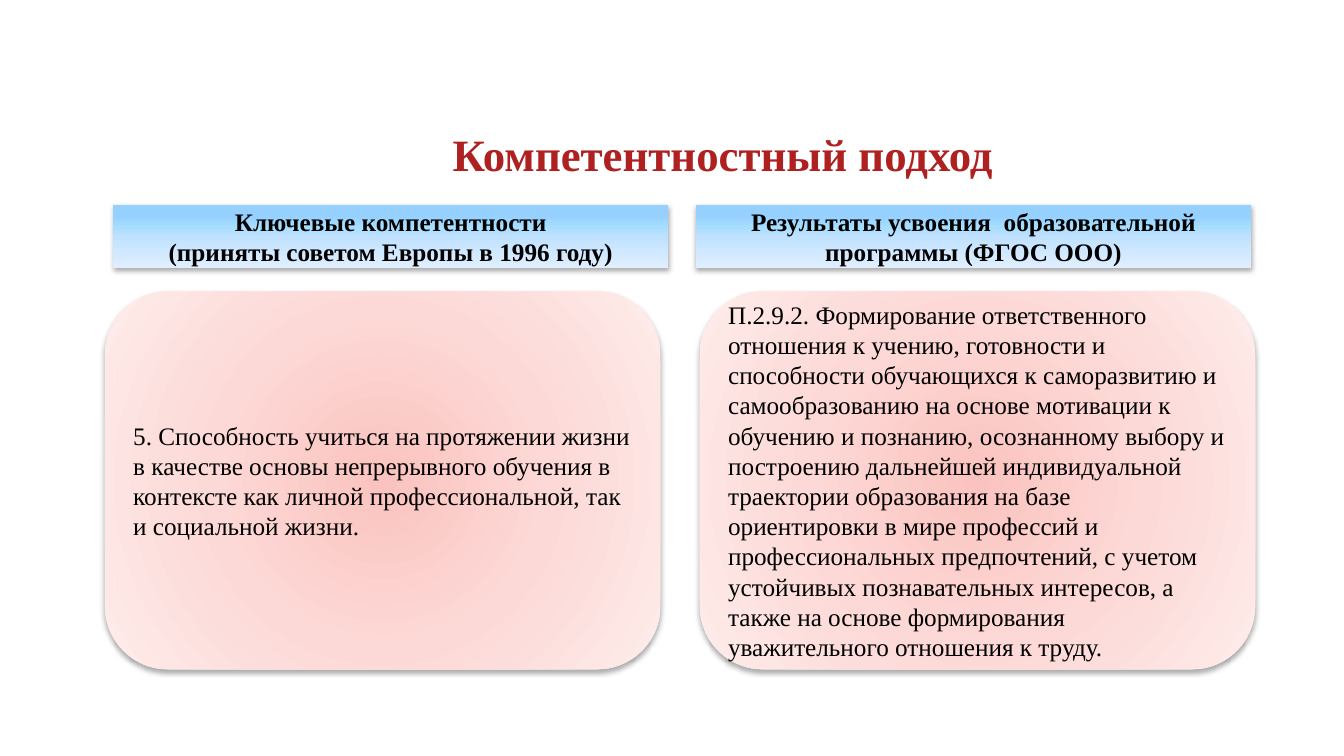
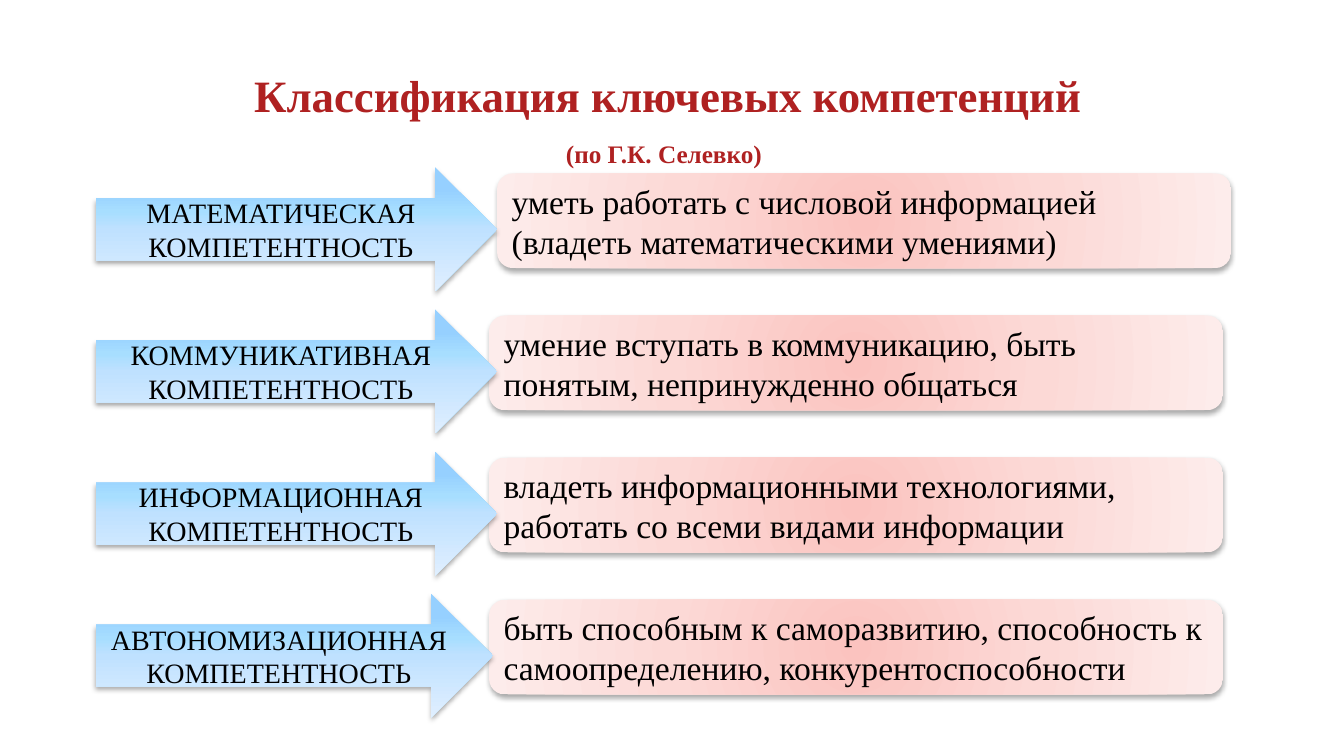
"""Build two slides on the competence-based approach and key competences."""
from lxml.etree import SubElement
from pptx import Presentation
from pptx.dml.color import RGBColor
from pptx.enum.shapes import MSO_SHAPE
from pptx.enum.text import MSO_ANCHOR, PP_ALIGN
from pptx.oxml import parse_xml
from pptx.oxml.ns import nsdecls, qn
from pptx.util import Pt

PX = 9144
FONT = "Times New Roman"
COLORS = {"title": "AF2121", "text": "000000", "shadow": "000000"}
BLUE = {
    "stops": [(18, "96D0FF"), (36, "A7DEFF"), (50, "BFE1FF"), (100, "E0EFFF")],
    "direction": '<a:lin ang="5400000" scaled="0"/>',
}
PINK = {
    "stops": [(0, "FBC3BF"), (50, "FCD9D6"), (100, "FDECEB")],
    "direction": '<a:path path="circle"><a:fillToRect l="50000" t="50000"'
                 ' r="50000" b="50000"/></a:path>',
}


def add_text(sp, text, size, color="text", bold=False, align=PP_ALIGN.CENTER):
    """Write styled, vertically centred text into a shape."""
    tf = sp.text_frame
    tf.word_wrap = True
    tf.vertical_anchor = MSO_ANCHOR.MIDDLE
    tf.text = text
    for p in tf.paragraphs:
        p.alignment = align
        for r in p.runs:
            r.font.name = FONT
            r.font.size = Pt(size)
            r.font.bold = bold
            r.font.color.rgb = RGBColor.from_string(COLORS[color])


def add_panel(s, kind, box, gradient):
    """Add an outline-free shape with a gradient and a soft shadow."""
    sp = s.shapes.add_shape(kind, *[v * PX for v in box])
    sp.line.fill.background()
    sp.fill.background()
    stops = "".join(
        f'<a:gs pos="{pos * 1000}"><a:srgbClr val="{color}"/></a:gs>'
        for pos, color in gradient["stops"])
    spPr = sp._element.spPr
    spPr.replace(spPr.find(qn("a:noFill")), parse_xml(
        f'<a:gradFill {nsdecls("a")} rotWithShape="1"><a:gsLst>{stops}</a:gsLst>'
        f'{gradient["direction"]}</a:gradFill>'))
    sp.shadow.inherit = False
    shadow = SubElement(
        spPr.find(qn("a:effectLst")), qn("a:outerShdw"), blurRad=str(Pt(3.5)),
        dist=str(Pt(2.2)), dir="5400000", rotWithShape="0")
    color = SubElement(shadow, qn("a:srgbClr"), val=COLORS["shadow"])
    SubElement(color, qn("a:alpha"), val="32000")
    return sp


prs = Presentation()
prs.slide_width = 1333 * PX
prs.slide_height = 750 * PX
blank = prs.slide_layouts[6]

titles = [
    [("Компетентностный подход", (284, 109, 866, 86), 32)],
    [("Классификация ключевых компетенций", (96, 62, 1133, 63), 32),
     ("(по Г.К. Селевко)", (96, 133, 1125, 39), 18)],
]
for lines in titles:
    s = prs.slides.add_slide(blank)
    for text, box, size in lines:
        sp = s.shapes.add_textbox(*[v * PX for v in box])
        add_text(sp, text, size, "title", bold=True)

approach, classification = prs.slides

columns = [
    (112, "Ключевые компетентности\n(приняты советом Европы в 1996 году)",
     104, "5. Способность учиться на протяжении жизни в качестве основы "
     "непрерывного обучения в контексте как личной профессиональной, так и "
     "социальной жизни."),
    (690, "Результаты усвоения  образовательной программы (ФГОС ООО)",
     694, "П.2.9.2. Формирование ответственного отношения к учению, готовности "
     "и способности обучающихся к саморазвитию и самообразованию на основе "
     "мотивации к обучению и познанию, осознанному выбору и построению "
     "дальнейшей индивидуальной траектории образования на базе ориентировки "
     "в мире профессий и профессиональных предпочтений, с учетом устойчивых "
     "познавательных интересов, а также на основе формирования уважительного "
     "отношения к труду."),
]
for head_x, heading, body_x, body in columns:
    sp = add_panel(approach, MSO_SHAPE.RECTANGLE, (head_x, 203, 551, 63), BLUE)
    add_text(sp, heading, 18, bold=True)
    sp = add_panel(approach, MSO_SHAPE.ROUNDED_RECTANGLE,
                   (body_x, 289, 551, 375), PINK)
    add_text(sp, body, 18, align=PP_ALIGN.LEFT)

competences = [
    ("МАТЕМАТИЧЕСКАЯ КОМПЕТЕНТНОСТЬ", 398, 493,
     "уметь работать с числовой информацией (владеть математическими умениями)"),
    ("КОММУНИКАТИВНАЯ КОМПЕТЕНТНОСТЬ", 398, 485,
     "умение вступать в коммуникацию, быть понятым, непринужденно общаться"),
    ("ИНФОРМАЦИОННАЯ КОМПЕТЕНТНОСТЬ", 398, 485,
     "владеть информационными технологиями, работать со всеми видами информации"),
    ("АВТОНОМИЗАЦИОННАЯ\vКОМПЕТЕНТНОСТЬ", 394, 485,
     "быть способным к саморазвитию, способность к самоопределению, "
     "конкурентоспособности"),
]
for i, (name, arrow_width, x, meaning) in enumerate(competences):
    y = 166 + i * 141
    sp = add_panel(classification, MSO_SHAPE.ROUNDED_RECTANGLE,
                   (x, y + 6, 728, 94), PINK)
    add_text(sp, meaning, 24, align=PP_ALIGN.LEFT)
    sp = add_panel(classification, MSO_SHAPE.RIGHT_ARROW,
                   (95, y, arrow_width, 123), BLUE)
    add_text(sp, name, 20)

prs.save("out.pptx")
